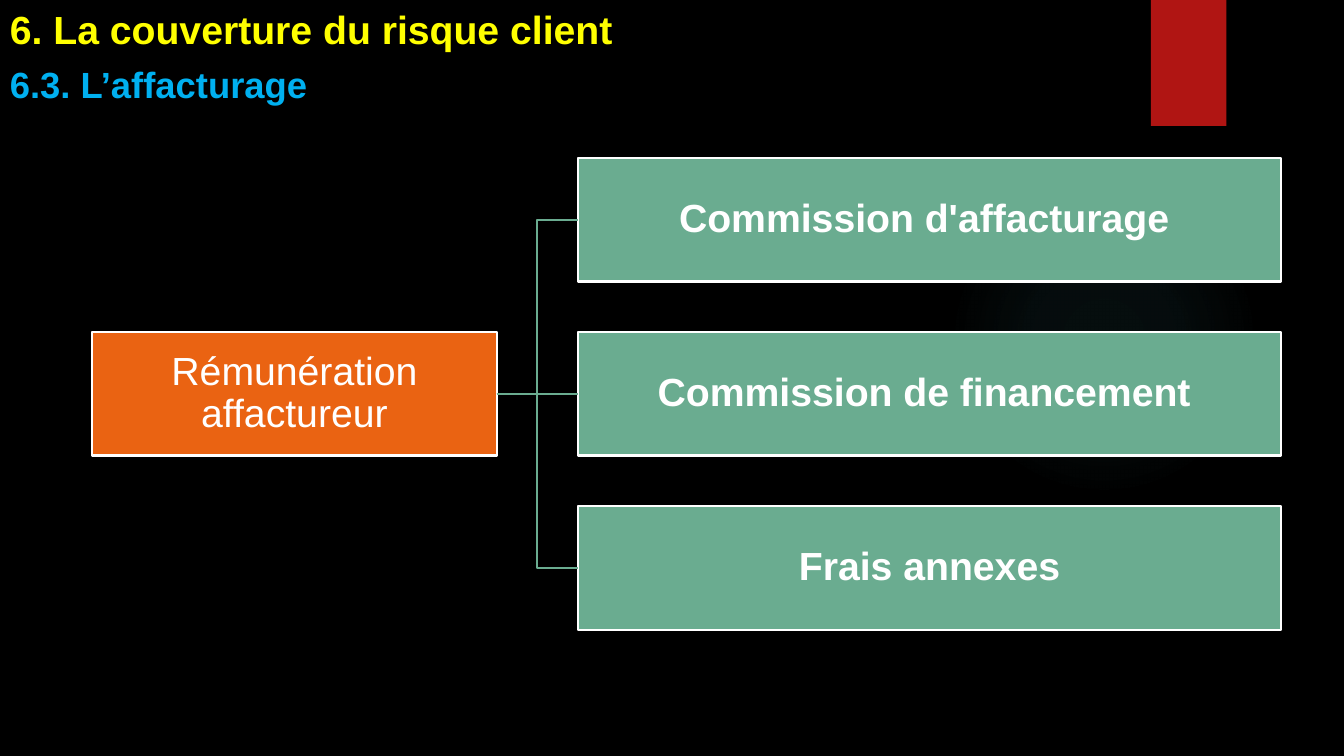
"""Build the slide on factoring fees: two headings and a one-to-three tree."""
from lxml import etree
from pptx import Presentation
from pptx.dml.color import RGBColor
from pptx.enum import shapes, text
from pptx.oxml import ns
from pptx.util import Pt

BLACK = RGBColor(0x00, 0x00, 0x00)
WHITE = RGBColor(0xFF, 0xFF, 0xFF)
YELLOW = RGBColor(0xFF, 0xFF, 0x00)
BLUE = RGBColor(0x00, 0xB0, 0xF0)
RED = RGBColor(0xB0, 0x15, 0x13)
ORANGE = RGBColor(0xEA, 0x63, 0x12)
GREEN = RGBColor(0x6A, 0xAC, 0x90)
GLOW = RGBColor(0x50, 0xB9, 0xC1)

HEADINGS = [
    ("6. La couverture du risque client", (0, 0, 525.6, 41), 28, YELLOW, text.PP_ALIGN.LEFT),
    ("6.3. L’affacturage", (0, 41, 907.2, 39), 26, BLUE, text.PP_ALIGN.JUSTIFY),
]
ROOT = "Rémunération affactureur"
FEES = ["Commission d'affacturage ", "Commission de financement ", "Frais annexes"]
GLOW_STOPS = [(0, 7), (36, 6), (69, 0)]

ROOT_LEFT, ROOT_WIDTH = 65.8, 289
FEE_LEFT, FEE_WIDTH = 412.7, 502.5
TREE_TOP, ROW_STEP, BOX_HEIGHT = 112.7, 124.3, 88.4
LEFT_SITE, RIGHT_SITE = 1, 3


def write(box, words, align, **font):
    frame = box.text_frame
    frame.word_wrap = True
    para = frame.paragraphs[0]
    para.alignment = align
    span = para.add_run()
    span.text = words
    color = font.pop("color")
    for name, value in {"name": "Arial", **font}.items():
        setattr(span.font, name, value)
    span.font.color.rgb = color
    return para


def add_block(page, kind, area, fill):
    block = page.shapes.add_shape(kind, *map(Pt, area))
    block.shadow.inherit = False
    block.fill.solid()
    block.fill.fore_color.rgb = fill
    block.line.fill.background()
    return block


def add_glow(page):
    glow = add_block(page, shapes.MSO_SHAPE.OVAL, (677.5, 131.8, 221.8, 221.8), GLOW)
    stops = "".join(
        f'<a:gs pos="{place * 1000}"><a:srgbClr val="{GLOW}">'
        f'<a:alpha val="{alpha * 1000}"/></a:srgbClr></a:gs>'
        for place, alpha in GLOW_STOPS
    )
    gradient = etree.fromstring(
        f'<a:gradFill {ns.nsdecls("a")}><a:gsLst>{stops}</a:gsLst><a:path path="circle">'
        '<a:fillToRect l="50000" t="50000" r="50000" b="50000"/></a:path></a:gradFill>'
    )
    properties = glow._element.spPr
    properties.replace(properties.find(ns.qn("a:solidFill")), gradient)


def add_node(page, words, left, row, width, fill, bold):
    area = (left, TREE_TOP + row * ROW_STEP, width, BOX_HEIGHT)
    node = add_block(page, shapes.MSO_SHAPE.RECTANGLE, area, fill)
    node.line.color.rgb = WHITE
    node.line.width = Pt(1.5)
    frame = node.text_frame
    for side in ("left", "top", "right", "bottom"):
        setattr(frame, f"margin_{side}", Pt(1.4))
    frame.vertical_anchor = text.MSO_ANCHOR.MIDDLE
    para = write(node, words, text.PP_ALIGN.CENTER, size=Pt(28), bold=bold, color=WHITE)
    para.line_spacing = 0.9
    return node


def link(page, root, fee, kind):
    line = page.shapes.add_connector(kind, 0, 0, 0, 0)
    line.begin_connect(root, RIGHT_SITE)
    line.end_connect(fee, LEFT_SITE)
    line.line.color.rgb = GREEN
    line.line.width = Pt(1.5)
    etree.SubElement(line._element.spPr, ns.qn("a:effectLst"))


def main():
    deck = Presentation()
    deck.slide_width, deck.slide_height = Pt(960), Pt(540)
    page = deck.slides.add_slide(deck.slide_layouts[6])
    page.background.fill.solid()
    page.background.fill.fore_color.rgb = BLACK

    add_glow(page)
    add_block(page, shapes.MSO_SHAPE.RECTANGLE, (822, 0, 54, 90), RED)
    for words, area, size, color, align in HEADINGS:
        box = page.shapes.add_textbox(*map(Pt, area))
        write(box, words, align, size=Pt(size), bold=True, color=color)

    middle = len(FEES) // 2
    root = add_node(page, ROOT, ROOT_LEFT, middle, ROOT_WIDTH, ORANGE, False)
    for row, words in enumerate(FEES):
        fee = add_node(page, words, FEE_LEFT, row, FEE_WIDTH, GREEN, True)
        straight = row == middle
        kind = shapes.MSO_CONNECTOR.STRAIGHT if straight else shapes.MSO_CONNECTOR.ELBOW
        link(page, root, fee, kind)

    deck.save("out.pptx")


if __name__ == "__main__":
    main()
